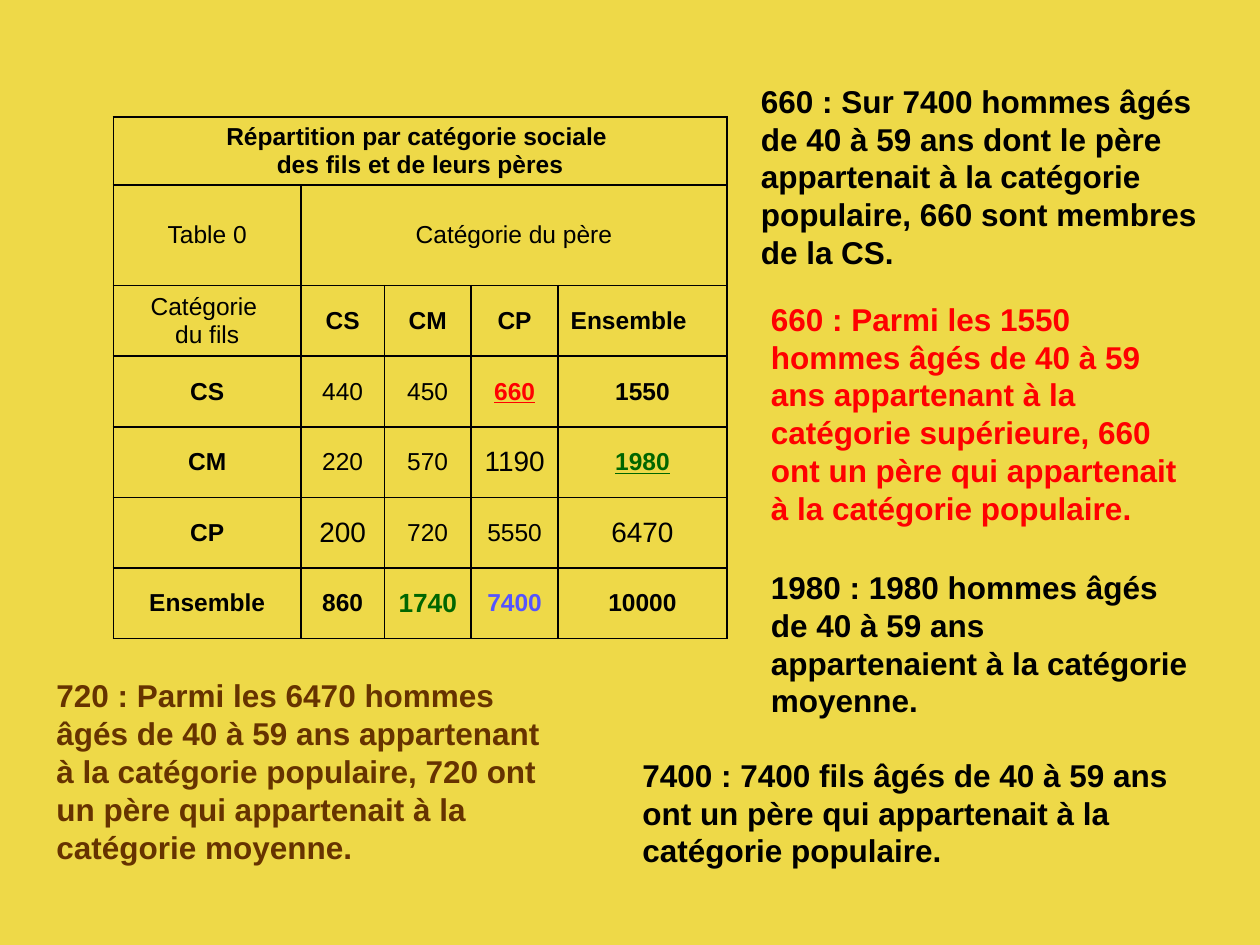
from pptx import Presentation
from pptx.dml.color import RGBColor
from pptx.enum.text import MSO_ANCHOR as Anchor, PP_ALIGN as Align
from pptx.oxml import parse_xml
from pptx.oxml.ns import nsdecls
from pptx.util import Inches, Pt

BLACK, RED, GREEN, BLUE, BROWN = "000000", "FF0000", "006600", "5554FF", "663300"


def color(code):
    return RGBColor.from_string(code)


class Board:
    font = "Arial"
    back = "EED948"

    def __init__(self, deck):
        self.slide = deck.slides.add_slide(deck.slide_layouts[6])
        fill = self.slide.background.fill
        fill.solid()
        fill.fore_color.rgb = color(self.back)

    def style(self, frame, size, tint=BLACK, bold=False, under=False, align=Align.LEFT):
        for para in frame.paragraphs:
            para.alignment = align
            for run in para.runs:
                font = run.font
                font.name, font.size = self.font, Pt(size)
                font.bold, font.underline = bold, under
                font.color.rgb = color(tint)

    def note(self, left, top, width, height, text, tint=BLACK):
        box = self.slide.shapes.add_textbox(
            Inches(left), Inches(top), Inches(width), Inches(height))
        frame = box.text_frame
        frame.word_wrap = True
        frame.text = text
        self.style(frame, 18, tint, bold=True)

    def border(self, cell):
        props = cell._tc.get_or_add_tcPr()
        for spot, side in enumerate(("lnL", "lnR", "lnT", "lnB")):
            props.insert(spot, parse_xml(
                f'<a:{side} {nsdecls("a")} w="12700"><a:solidFill>'
                f'<a:srgbClr val="{BLACK}"/></a:solidFill></a:{side}>'))

    def table(self, left, top, widths, heights, rows, spans, looks):
        grid = self.slide.shapes.add_table(
            len(rows), len(widths), Inches(left), Inches(top),
            Inches(sum(widths)), Inches(sum(heights))).table
        grid.first_row = grid.horz_banding = False
        for col, width in zip(grid.columns, widths):
            col.width = Inches(width)
        for row, height in zip(grid.rows, heights):
            row.height = Inches(height)
        for r, c in spans:
            grid.cell(r, c).merge(grid.cell(r, len(widths) - 1))
        for r, row in enumerate(rows):
            for c, text in enumerate(row):
                cell = grid.cell(r, c)
                cell.fill.background()
                self.border(cell)
                cell.vertical_anchor = Anchor.MIDDLE
                if text:
                    cell.text_frame.text = text
                    look = {"size": 14, "align": Align.CENTER, **looks.get((r, c), {})}
                    self.style(cell.text_frame, **look)


def main():
    deck = Presentation()
    deck.slide_width, deck.slide_height = Inches(10), Inches(7.5)
    board = Board(deck)

    # Mobility table: sons in rows, fathers in columns
    rows = [
        ["Répartition par catégorie sociale \ndes fils et de leurs pères", "", "", "", ""],
        ["Table 0", "Catégorie du père", "", "", ""],
        ["Catégorie \ndu fils", "CS", "CM", "CP", "Ensemble"],
        ["CS", "440", "450", "660", "1550"],
        ["CM", "220", "570", "1190", "1980"],
        ["CP", "200", "720", "5550", "6470"],
        ["Ensemble", "860", "1740", "7400", "10000"],
    ]
    # Bold title, headings and totals, then the cells that stand out
    strong = [(0, 0), (3, 4)]
    strong += [(2, c) for c in range(1, 5)]
    strong += [(r, 0) for r in range(3, 6)]
    strong += [(6, c) for c in range(5)]
    looks = {spot: {"bold": True} for spot in strong}
    looks[2, 4]["align"] = Align.LEFT
    looks[3, 3] = {"tint": RED, "bold": True, "under": True}
    looks[4, 4] = {"tint": GREEN, "bold": True, "under": True}
    looks[6, 2].update(size=15, tint=GREEN)
    looks[6, 3].update(tint=BLUE)
    for spot in [(4, 3), (5, 1), (5, 4)]:
        looks[spot] = {"size": 16}
    board.table(0.9, 0.93, [1.49, 0.66, 0.69, 0.69, 1.34],
                [0.53, 0.8] + [0.56] * 5, rows, [(0, 0), (1, 1)], looks)

    # Readings of the figures
    board.note(5.94, 0.6, 3.78, 1.6,
               "660 : Sur 7400 hommes âgés de 40 à 59 ans dont le père appartenait "
               "à la catégorie populaire, 660 sont membres de la CS.")
    board.note(6.02, 2.33, 3.62, 1.9,
               "660 : Parmi les 1550 hommes âgés de 40 à 59 ans appartenant à la "
               "catégorie supérieure, 660 ont un père qui appartenait à la "
               "catégorie populaire.", RED)
    board.note(6.02, 4.46, 3.54, 1.3,
               "1980 : 1980 hommes âgés de 40 à 59 ans appartenaient à la "
               "catégorie moyenne.")
    board.note(0.35, 5.32, 4.17, 1.6,
               "720 : Parmi les 6470 hommes âgés de 40 à 59 ans appartenant à la "
               "catégorie populaire, 720 ont un père qui appartenait à la "
               "catégorie moyenne.", BROWN)
    board.note(5, 5.95, 4.49, 1,
               "7400 : 7400 fils âgés de 40 à 59 ans ont un père qui appartenait "
               "à la catégorie populaire.")
    deck.save("out.pptx")


if __name__ == "__main__":
    main()
